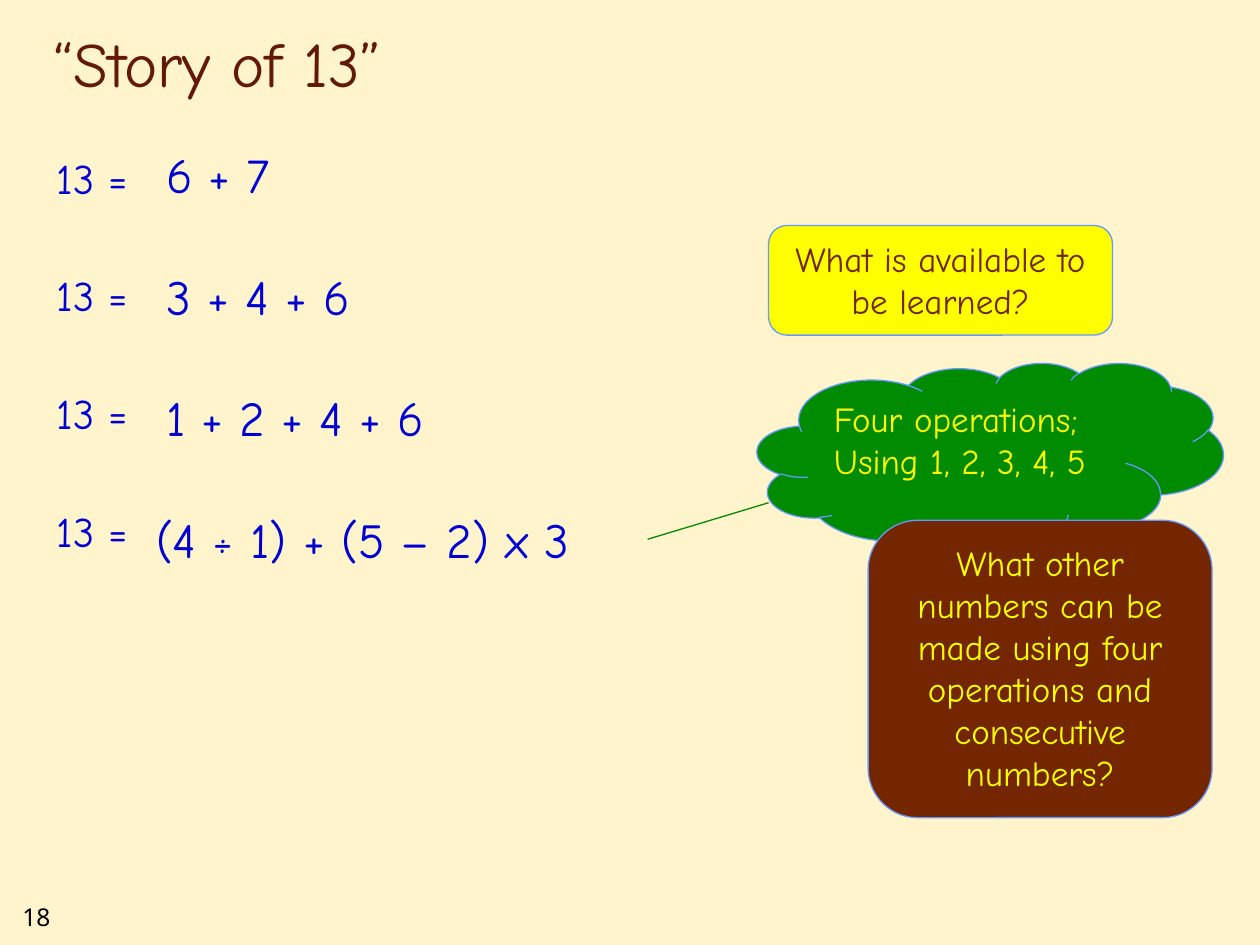
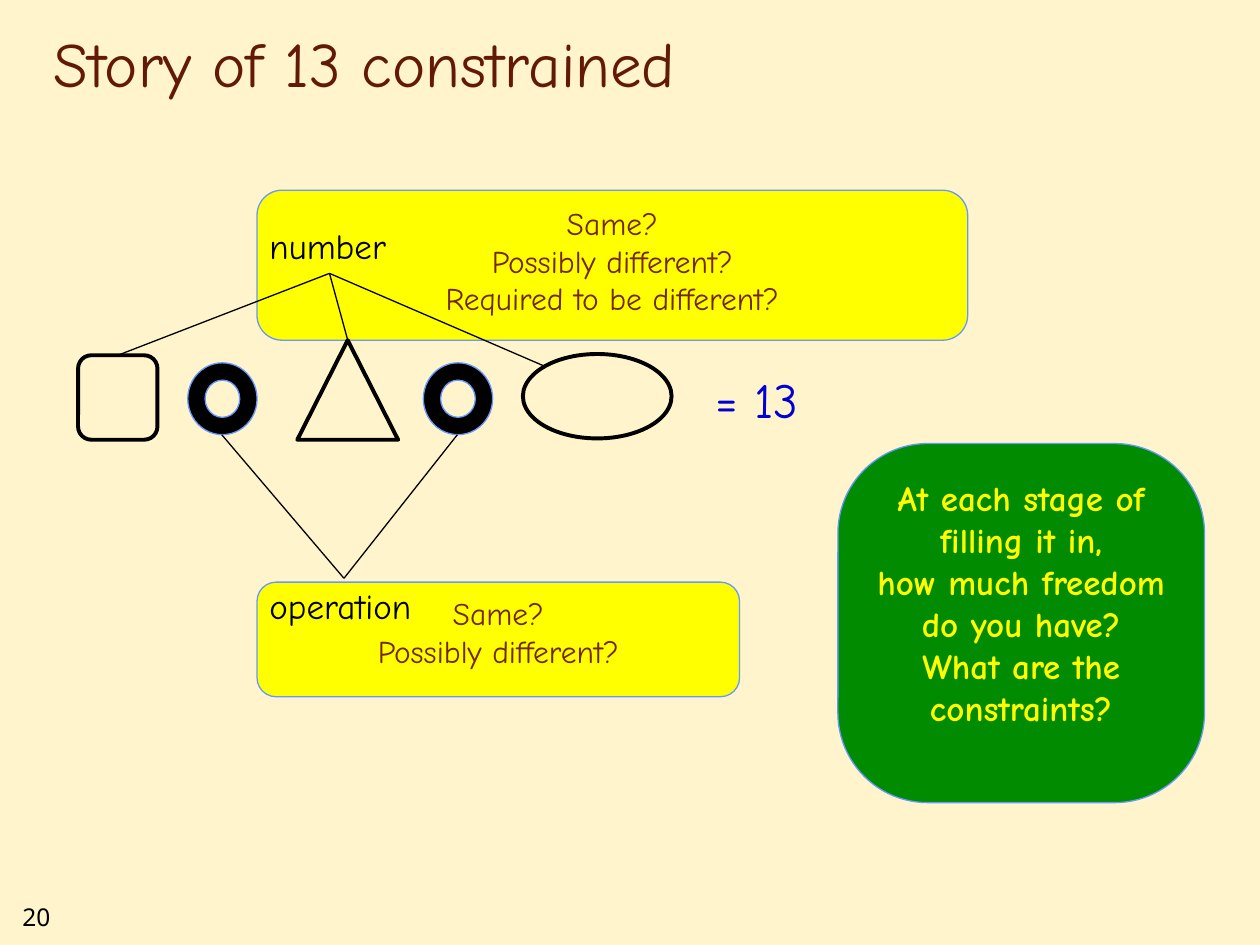
from pptx import Presentation
from pptx.dml.color import RGBColor
from pptx.enum.shapes import MSO_CONNECTOR, MSO_SHAPE as SHAPE
from pptx.enum.text import MSO_ANCHOR as ANCHOR, MSO_AUTO_SIZE as AUTO_SIZE, PP_ALIGN as ALIGN
from pptx.oxml.ns import qn
from pptx.util import Inches, Pt
from lxml import etree

COLORS = {
    "background": "FFF2C0",
    "title": "631908",
    "equation": "0000D4",
    "yellow": "FFFF00",
    "green": "008B00",
    "brown": "732600",
    "outline": "6699FF",
    "black": "000000",
}
HAND_FONT = "Comic Neue"
NUMBER_FONT = "Noto Sans"
TOP, LEFT, BOTTOM, RIGHT = range(4)


def color(name):
    return RGBColor.from_string(COLORS[name])


def write(shape, text, size, color_name, align=ALIGN.LEFT, bold=False, font=HAND_FONT, gap=0):
    frame = shape.text_frame
    frame.text = text
    for index, paragraph in enumerate(frame.paragraphs):
        paragraph.alignment = align
        paragraph.space_before = Pt(gap if index else 0)
        for run in paragraph.runs:
            run.font.name = font
            run.font.size = Pt(size)
            run.font.bold = bold
            run.font.color.rgb = color(color_name)


def add_text(slide, box, text, size, color_name, wrap=False, anchor=ANCHOR.TOP, **style):
    text_box = slide.shapes.add_textbox(*map(Inches, box))
    frame = text_box.text_frame
    frame.word_wrap = wrap
    frame.auto_size = AUTO_SIZE.NONE if wrap else AUTO_SIZE.SHAPE_TO_FIT_TEXT
    frame.vertical_anchor = anchor
    write(text_box, text, size, color_name, **style)
    return text_box


def add_shape(slide, kind, box, fill=None, line="outline", width=0.75):
    shape = slide.shapes.add_shape(kind, *map(Inches, box))
    shape.shadow.inherit = False
    if fill:
        shape.fill.solid()
        shape.fill.fore_color.rgb = color(fill)
    else:
        shape.fill.background()
    shape.line.color.rgb = color(line)
    shape.line.width = Pt(width)
    return shape


def add_callout(slide, box, text, fill, text_color, size=20, kind=SHAPE.ROUNDED_RECTANGLE,
                align=ALIGN.CENTER, bold=False):
    callout = add_shape(slide, kind, box, fill)
    callout.text_frame.word_wrap = True
    callout.text_frame.vertical_anchor = ANCHOR.TOP
    write(callout, text, size, text_color, align, bold)
    return callout


def add_line(slide, start, end, color_name="black"):
    line = slide.shapes.add_connector(MSO_CONNECTOR.STRAIGHT, *map(Inches, start + end))
    line.line.color.rgb = color(color_name)
    line.line.width = Pt(0.75)
    etree.SubElement(line.element.spPr, qn("a:effectLst"))
    return line


def add_base_slide(presentation, title, number):
    slide = presentation.slides.add_slide(presentation.slide_layouts[6])
    fill = slide.background.fill
    fill.solid()
    fill.fore_color.rgb = color("background")
    background_color = next(slide.element.iter(qn("a:srgbClr")))
    etree.SubElement(background_color, qn("a:alpha")).set("val", "82000")
    add_text(slide, (0.08, 7.11, 0.75, 0.34), number, 14, "black", wrap=True, font=NUMBER_FONT)
    add_text(slide, (0.33, 0.17, 8.5, 0.67), title, 36, "title", wrap=True, anchor=ANCHOR.BOTTOM)
    return slide


def add_equations(slide, left, top):
    rows = [
        ("6 + 7", 0.87, 1.16),
        ("3 + 4 + 6", 0.87, 1.9),
        ("1 + 2 + 4 + 6", 0.87, 2.56),
        ("(4 ÷ 1) + (5 – 2) x 3", 0.79, 4),
    ]
    for index, (expression, offset, width) in enumerate(rows):
        box = (left + offset, top + index * 0.965, width, 0.57)
        expression_box = add_text(slide, box, expression, 28, "equation")
    left_sides = "\n".join(["13 ="] * len(rows))
    add_text(slide, (left, top + 0.06, 1.18, 3.23), left_sides, 24, "equation", wrap=True, gap=38.4)
    return expression_box


def add_questions(slide, left, top):
    add_callout(slide, (left + 0.09, top, 2.73, 0.87), "What is available to be learned?",
                "yellow", "brown")
    add_callout(slide, (left, top + 1.09, 3.7, 1.5), "Four operations;\nUsing 1, 2, 3, 4, 5",
                "green", "yellow", kind=SHAPE.CLOUD, align=ALIGN.LEFT)
    add_callout(slide, (left + 0.88, top + 2.34, 2.73, 2.36),
                "What other numbers can be made using four operations and consecutive numbers?",
                "brown", "yellow")


def add_constraint_diagram(slide, left, top):
    def place(x, y, width, height):
        return left + x, top + y, width, height

    add_callout(slide, place(1.42, 3.11, 3.83, 0.91), "Same?\nPossibly different?",
                "yellow", "brown", 18)
    add_callout(slide, place(1.42, 0, 5.64, 1.19),
                "Same?\nPossibly different?\nRequired to be different?", "yellow", "brown", 18)

    number_shapes = [
        add_shape(slide, kind, place(*box), line="black", width=2.25)
        for kind, box in [
            (SHAPE.ROUNDED_RECTANGLE, (0, 1.31, 0.63, 0.67)),
            (SHAPE.ISOSCELES_TRIANGLE, (1.74, 1.19, 0.8, 0.79)),
            (SHAPE.OVAL, (3.53, 1.3, 1.18, 0.67)),
        ]
    ]
    add_text(slide, place(4.96, 1.37, 0.91, 0.57), "= 13", 28, "equation")
    operation_label = add_text(slide, place(1.42, 3.08, 1.38, 0.44), "operation", 20, "black")
    number_label = add_text(slide, place(1.42, 0.22, 1.15, 0.44), "number", 20, "black")

    for x in (0.87, 2.74):
        add_shape(slide, SHAPE.DONUT, place(x, 1.37, 0.55, 0.57), "black")
        line = add_line(slide, (left + x + 0.27, top + 1.94), (left + 2.11, top + 3.08))
        line.end_connect(operation_label, TOP)

    number_ends = [(0.32, 1.31), (2.14, 1.19), (3.71, 1.4)]
    for number_shape, (x, y) in zip(number_shapes, number_ends):
        line = add_line(slide, (left + 2, top + 0.66), (left + x, top + y))
        line.begin_connect(number_label, BOTTOM)
        if number_shape is number_shapes[0]:
            line.end_connect(number_shape, TOP)


def build_story(presentation):
    slide = add_base_slide(presentation, "“Story of 13”", "18")
    last_expression = add_equations(slide, 0.35, 1.1)
    add_questions(slide, 6.01, 1.79)
    line = add_line(slide, (5.14, 4.27), (6.1, 3.99), "green")
    line.begin_connect(last_expression, RIGHT)


def build_constrained_story(presentation):
    slide = add_base_slide(presentation, "Story of 13 constrained", "20")
    add_constraint_diagram(slide, 0.62, 1.51)
    freedom = add_callout(
        slide, (6.65, 3.52, 2.91, 2.85),
        "At each stage of filling it in,\vhow much freedom do you have?\nWhat are the constraints?",
        "green", "yellow", bold=True)
    freedom.adjustments[0] = 0.25


def main():
    presentation = Presentation()
    presentation.slide_width = Inches(10)
    presentation.slide_height = Inches(7.5)
    build_story(presentation)
    build_constrained_story(presentation)
    presentation.save("out.pptx")


if __name__ == "__main__":
    main()
